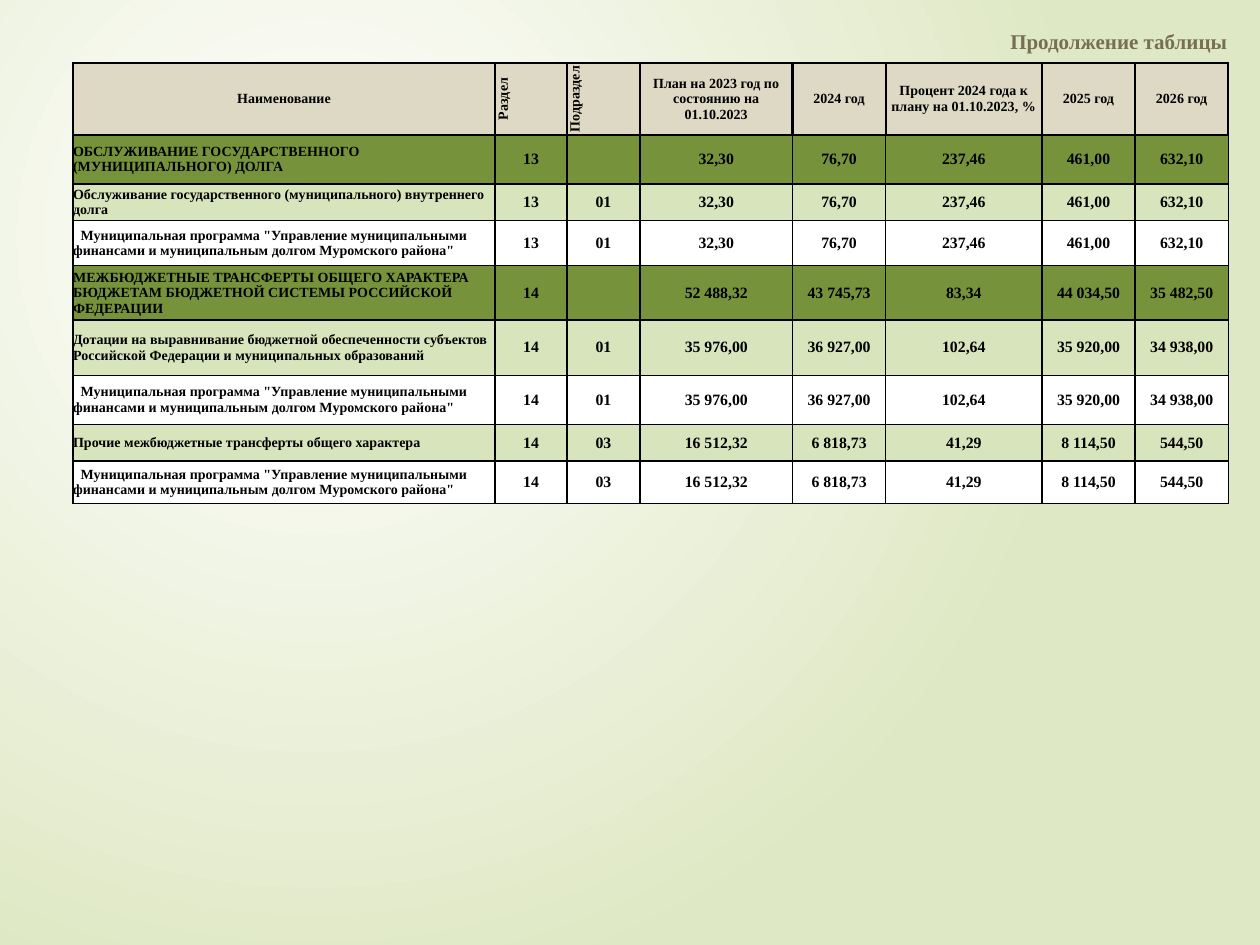
from lxml.etree import SubElement
from pptx import Presentation
from pptx.dml.color import RGBColor
from pptx.enum.text import MSO_ANCHOR, PP_ALIGN
from pptx.oxml import parse_xml
from pptx.oxml.ns import nsdecls, qn
from pptx.util import Inches, Pt


def color(hex_code):
    return RGBColor.from_string(hex_code)


def add_text(paragraph, text, size, hex_code):
    run = paragraph.add_run()
    run.text = text
    run.font.name = "Times New Roman"
    run.font.size = Pt(size)
    run.font.bold = True
    run.font.color.rgb = color(hex_code)


PROGRAM = ('Муниципальная программа "Управление муниципальными финансами '
           'и муниципальным долгом Муромского района"')
HEADER_FILL = "DDD9C4"
FILLS = {"section": "76933C", "subsection": "D8E4BC", "program": "FFFFFF"}

debt = ["32,30", "76,70", "237,46", "461,00", "632,10"]
transfers = ["52 488,32", "43 745,73", "83,34", "44 034,50", "35 482,50"]
grants = ["35 976,00", "36 927,00", "102,64", "35 920,00", "34 938,00"]
other_transfers = ["16 512,32", "6 818,73", "41,29", "8 114,50", "544,50"]

headings = ["Наименование", "Раздел", "Подраздел",
            "План на 2023 год по состоянию на 01.10.2023", "2024 год",
            "Процент 2024 года к плану на 01.10.2023, %", "2025 год", "2026 год"]
budget_lines = [
    ("section", 0.39, "ОБСЛУЖИВАНИЕ ГОСУДАРСТВЕННОГО (МУНИЦИПАЛЬНОГО) ДОЛГА", "13", "", debt),
    ("subsection", 0.29, "Обслуживание государственного (муниципального) внутреннего долга",
     "13", "01", debt),
    ("program", 0.36, PROGRAM, "13", "01", debt),
    ("section", 0.43, "МЕЖБЮДЖЕТНЫЕ ТРАНСФЕРТЫ ОБЩЕГО ХАРАКТЕРА БЮДЖЕТАМ "
     "БЮДЖЕТНОЙ СИСТЕМЫ РОССИЙСКОЙ ФЕДЕРАЦИИ", "14", "", transfers),
    ("subsection", 0.44, "Дотации на выравнивание бюджетной обеспеченности субъектов "
     "Российской Федерации и муниципальных образований", "14", "01", grants),
    ("program", 0.39, PROGRAM, "14", "01", grants),
    ("subsection", 0.29, "Прочие межбюджетные трансферты общего характера",
     "14", "03", other_transfers),
    ("program", 0.34, PROGRAM, "14", "03", other_transfers),
]
column_widths = [3.35, 0.57, 0.58, 1.21, 0.74, 1.24, 0.74, 0.74]
row_heights = [0.57] + [line[1] for line in budget_lines]

presentation = Presentation()
presentation.slide_width = Inches(10)
presentation.slide_height = Inches(7.5)
slide = presentation.slides.add_slide(presentation.slide_layouts[6])

slide.background.fill.solid()
background = slide.background.fill._xPr
background.replace(background.find(qn("a:solidFill")), parse_xml(
    f'<a:gradFill {nsdecls("a")} rotWithShape="1"><a:gsLst>'
    '<a:gs pos="0"><a:srgbClr val="FFFFFF"/></a:gs>'
    '<a:gs pos="100000"><a:srgbClr val="DFE8C4"/></a:gs></a:gsLst>'
    '<a:path path="circle">'
    '<a:fillToRect l="50000" t="50000" r="100000" b="100000"/>'
    '</a:path></a:gradFill>'))

continuation = slide.shapes.add_textbox(Inches(7.92), Inches(0.18), Inches(2), Inches(0.48))
continuation.text_frame.word_wrap = True
continuation_line = continuation.text_frame.paragraphs[0]
continuation_line.alignment = PP_ALIGN.JUSTIFY
add_text(continuation_line, "Продолжение таблицы", 12, "766F54")

budget = slide.shapes.add_table(
    len(row_heights), len(column_widths), Inches(0.58), Inches(0.5),
    Inches(sum(column_widths)), Inches(sum(row_heights))).table
for column, width in zip(budget.columns, column_widths):
    column.width = Inches(width)
for row, height in zip(budget.rows, row_heights):
    row.height = Inches(height)

table_lines = [("header", headings)]
table_lines += [(kind, [name, section, subsection, *amounts])
                for kind, _, name, section, subsection, amounts in budget_lines]

for row_index, (kind, texts) in enumerate(table_lines):
    is_header = kind == "header"
    for column_index, text in enumerate(texts):
        is_name = column_index == 0
        cell = budget.cell(row_index, column_index)
        cell.margin_left = cell.margin_right = cell.margin_top = cell.margin_bottom = 0
        cell.vertical_anchor = MSO_ANCHOR.MIDDLE
        properties = cell._tc.get_or_add_tcPr()
        if is_header and column_index in (1, 2):
            properties.set("vert", "vert270")
        for side in ("lnL", "lnR", "lnT", "lnB"):
            weight = 1.5 if is_header and side != "lnB" else 1
            border = SubElement(properties, qn(f"a:{side}"), w=str(Pt(weight)))
            border_fill = SubElement(border, qn("a:solidFill"))
            SubElement(border_fill, qn("a:srgbClr"), val="000000")
        cell.fill.solid()
        cell.fill.fore_color.rgb = color(HEADER_FILL if is_header else FILLS[kind])
        paragraph = cell.text_frame.paragraphs[0]
        paragraph.alignment = PP_ALIGN.LEFT if is_name and not is_header else PP_ALIGN.CENTER
        if is_name and kind == "program":
            paragraph._p.get_or_add_pPr().set("indent", str(Inches(0.06)))
        if text:
            add_text(paragraph, text, 8 if is_header or is_name else 9, "000000")

presentation.save("out.pptx")
